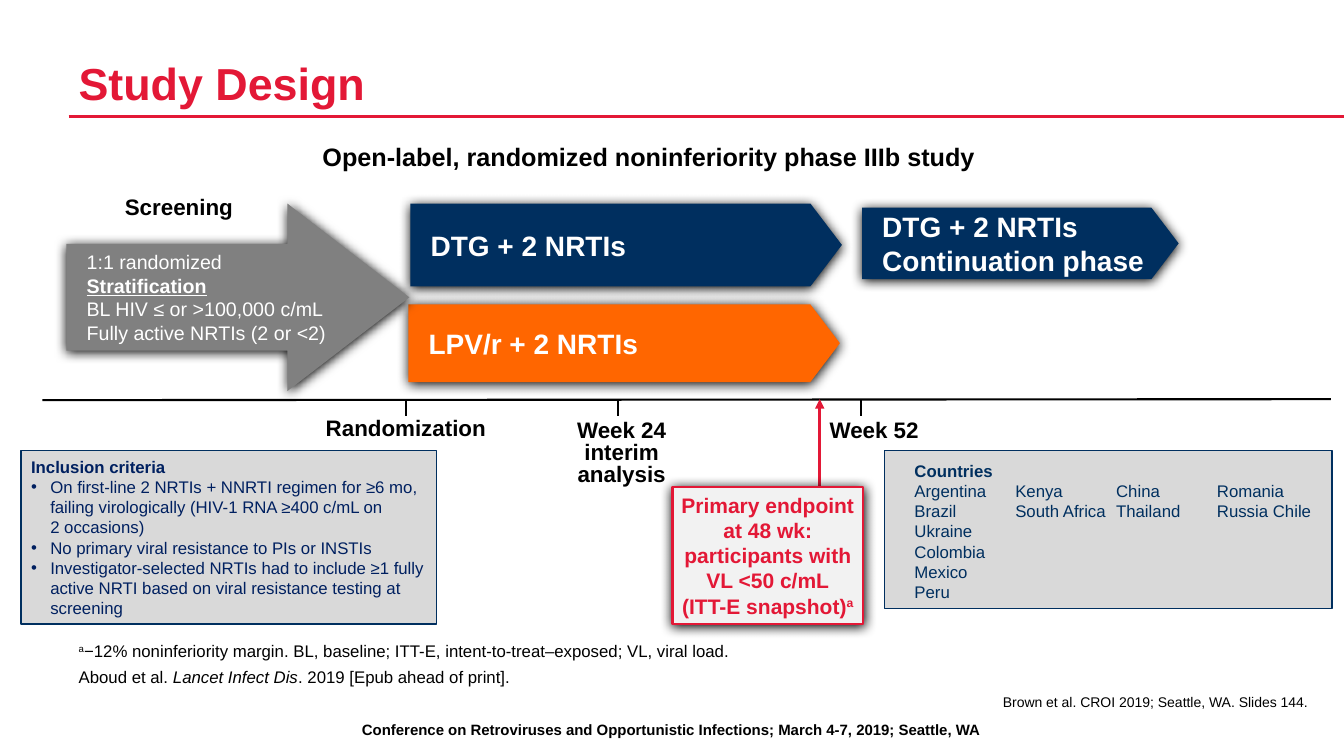
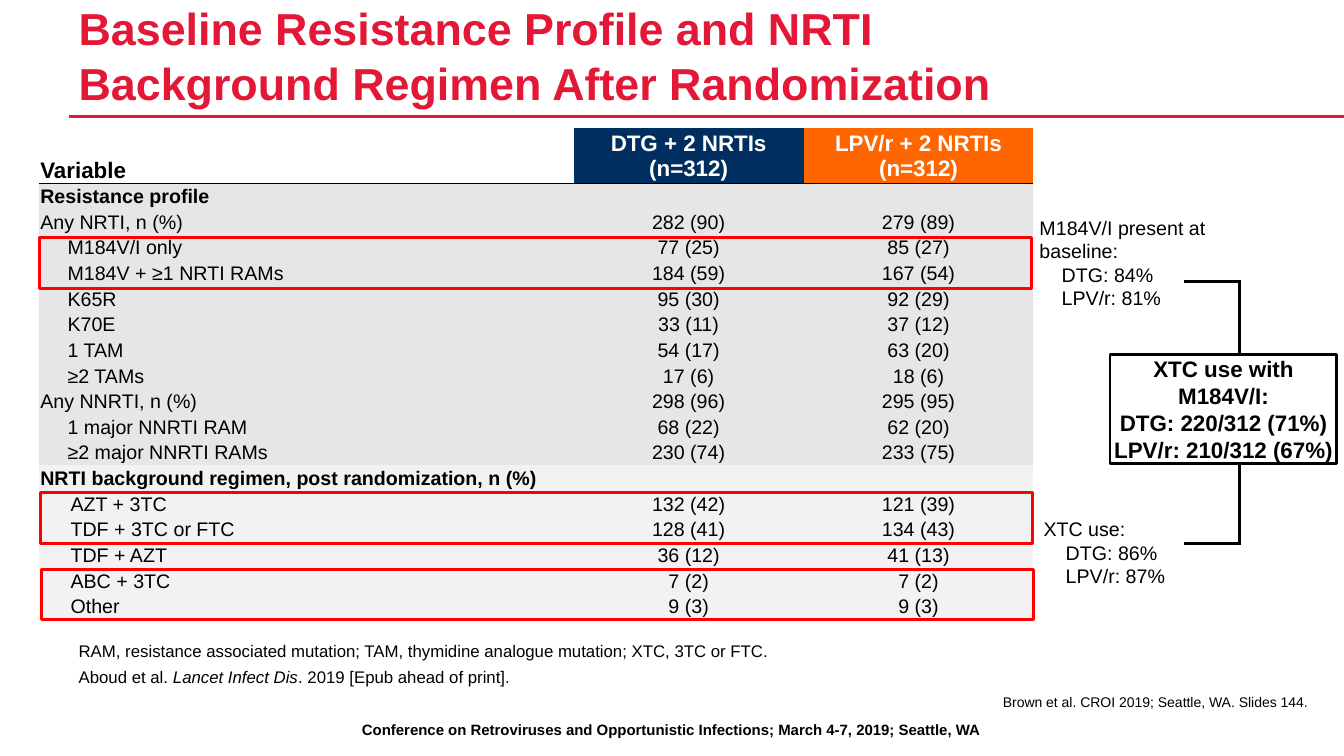
from copy import deepcopy

from lxml.etree import SubElement
from pptx import Presentation
from pptx.dml.color import RGBColor
from pptx.enum.shapes import MSO_CONNECTOR, MSO_SHAPE
from pptx.enum.text import MSO_ANCHOR, PP_ALIGN
from pptx.oxml.ns import qn
from pptx.util import Inches, Pt

FONT = "Arial"
COLORS = {
    "red": "E31836", "highlight": "FF0000", "navy": "002F5F", "ink": "002060",
    "orange": "FF6600", "gray": "808080", "panel": "D9D9D9", "profile": "E6E6E6",
    "regimen": "F2F2F2", "black": "000000", "white": "FFFFFF",
}
ALIGN = {"left": PP_ALIGN.LEFT, "center": PP_ALIGN.CENTER, "right": PP_ALIGN.RIGHT}
ANCHOR = {"top": MSO_ANCHOR.TOP, "middle": MSO_ANCHOR.MIDDLE, "bottom": MSO_ANCHOR.BOTTOM}
NO_GRID_STYLE = "{2D5ABB26-0587-4C30-8999-92F81FD0307C}"
CITATION = ["Aboud et al. ", {"text": "Lancet Infect Dis", "italic": True},
            ". 2019 [Epub ahead of print]."]

PROFILE_ROWS = [
    ("Any NRTI, n (%)", "282 (90)", "279 (89)"),
    ("M184V/I only", "77 (25)", "85 (27)"),
    ("M184V + ≥1 NRTI RAMs", "184 (59)", "167 (54)"),
    ("K65R", "95 (30)", "92 (29)"),
    ("K70E", "33 (11)", "37 (12)"),
    ("1 TAM", "54 (17)", "63 (20)"),
    ("≥2 TAMs", "17 (6)", "18 (6)"),
    ("Any NNRTI, n (%)", "298 (96)", "295 (95)"),
    ("1 major NNRTI RAM", "68 (22)", "62 (20)"),
    ("≥2 major NNRTI RAMs", "230 (74)", "233 (75)"),
]
REGIMEN_ROWS = [
    ("AZT + 3TC", "132 (42)", "121 (39)"),
    ("TDF + 3TC or FTC", "128 (41)", "134 (43)"),
    ("TDF + AZT", "36 (12)", "41 (13)"),
    ("ABC + 3TC", "7 (2)", "7 (2)"),
    ("Other", "9 (3)", "9 (3)"),
]


def rgb(name):
    return RGBColor.from_string(COLORS[name])


def format_run(run, size=12, color="black", bold=False, italic=False, underline=False,
               superscript=False):
    font = run.font
    font.name, font.size, font.bold = FONT, Pt(size), bold
    font.italic, font.underline = italic, underline
    font.color.rgb = rgb(color)
    if superscript:
        run._r.get_or_add_rPr().set("baseline", "30000")


def format_paragraph(paragraph, align="left", spacing=1.0, after=0, indent=0,
                     bullet=None, tabs=()):
    properties = paragraph._p.get_or_add_pPr()
    if indent:
        properties.set("marL", str(Inches(indent)))
    if bullet:
        properties.set("indent", str(-Inches(indent)))
        SubElement(properties, qn("a:buFont"), typeface=FONT)
        SubElement(properties, qn("a:buChar"), char=bullet)
    if tabs:
        tab_list = SubElement(properties, qn("a:tabLst"))
        for position in tabs:
            SubElement(tab_list, qn("a:tab"), pos=str(Inches(position)), algn="l")
    paragraph.alignment = ALIGN[align]
    paragraph.line_spacing = spacing
    paragraph.space_before, paragraph.space_after = Pt(0), Pt(after)


def write_text(frame, paragraphs, align="left", spacing=1.0, after=0, tabs=(), **run_format):
    """A paragraph is a string, a list of runs, or a dict of text and overrides."""
    paragraphs = [paragraphs] if isinstance(paragraphs, str) else paragraphs
    for index, item in enumerate(paragraphs):
        paragraph = frame.paragraphs[0] if index == 0 else frame.add_paragraph()
        options = dict(item) if isinstance(item, dict) else {"text": item}
        text = options.pop("text")
        layout = {"align": align, "spacing": spacing, "after": after, "tabs": tabs}
        for key in ("indent", "bullet"):
            if key in options:
                layout[key] = options.pop(key)
        format_paragraph(paragraph, **layout)
        for part in [text] if isinstance(text, str) else text:
            part = part if isinstance(part, dict) else {"text": part}
            style = {**run_format, **options, **part}
            for number, line in enumerate(style.pop("text").split("\n")):
                if number:
                    paragraph.add_line_break()
                run = paragraph.add_run()
                run.text = line
                format_run(run, **style)
        for line_break in paragraph._p.findall(qn("a:br")):
            line_break.append(deepcopy(paragraph.runs[0]._r.rPr))


def set_frame(frame, anchor="top", margins=(0.1, 0.05, 0.1, 0.05), wrap=True):
    frame.word_wrap = wrap
    frame.vertical_anchor = ANCHOR[anchor]
    (frame.margin_left, frame.margin_top,
     frame.margin_right, frame.margin_bottom) = map(Inches, margins)


def add_text(slide, box, paragraphs, anchor="top", margins=(0, 0, 0, 0), wrap=True, **text_format):
    frame = slide.shapes.add_textbox(*map(Inches, box)).text_frame
    set_frame(frame, anchor, margins, wrap)
    write_text(frame, paragraphs, **text_format)


def add_label(slide, box, paragraphs, size=16, wrap=False, **text_format):
    add_text(slide, box, paragraphs, margins=(0.1, 0.05, 0.1, 0.05), wrap=wrap,
             size=size, bold=True, **text_format)


def add_glow(shape):
    """Dark soft shadow just below the shape."""
    effects = shape._element.spPr.find(qn("a:effectLst"))
    shadow = SubElement(effects, qn("a:outerShdw"), blurRad=str(Pt(8.5)), dist=str(Pt(1)),
                        dir="5400000", algn="t", rotWithShape="0")
    SubElement(shadow, qn("a:srgbClr"), val=COLORS["black"])


def add_block(slide, kind, box, fill=None, line=None, width=1, adjustments=(), glow=False):
    shape = slide.shapes.add_shape(kind, *map(Inches, box))
    shape.shadow.inherit = False
    for index, value in enumerate(adjustments):
        shape.adjustments[index] = value
    if fill:
        shape.fill.solid()
        shape.fill.fore_color.rgb = rgb(fill)
    else:
        shape.fill.background()
    if line:
        shape.line.color.rgb = rgb(line)
        shape.line.width = Pt(width)
    else:
        shape.line.fill.background()
    if glow:
        add_glow(shape)
    return shape


def add_panel(slide, box, paragraphs, fill, line, width=1, glow=False, anchor="middle",
              margins=(0.1, 0.05, 0.1, 0.05), **text_format):
    frame = add_block(slide, MSO_SHAPE.RECTANGLE, box, fill, line, width, glow=glow).text_frame
    set_frame(frame, anchor, margins)
    write_text(frame, paragraphs, **text_format)


def add_arrow_block(slide, kind, box, fill, paragraphs, adjustments, **text_format):
    shape = add_block(slide, kind, box, fill, adjustments=adjustments, glow=True)
    set_frame(shape.text_frame, "middle", (0.2, 0.05, 0, 0.05))
    write_text(shape.text_frame, paragraphs, color="white", **text_format)


def add_line(slide, start, end, color="black", width=1.5, arrow=False):
    connector = slide.shapes.add_connector(MSO_CONNECTOR.STRAIGHT, *map(Inches, start + end))
    connector.line.color.rgb = rgb(color)
    connector.line.width = Pt(width)
    if arrow:
        SubElement(connector.line._get_or_add_ln(), qn("a:tailEnd"), type="triangle")
    SubElement(connector._element.spPr, qn("a:effectLst"))


def add_base_slide(presentation, title, footnote):
    """Slide with the title, rule, footnotes and footer that all slides share."""
    slide = presentation.slides.add_slide(presentation.slide_layouts[6])
    add_label(slide, (0.09, 7.1, 13.14, 0.28),
              "Conference on Retroviruses and Opportunistic Infections; March 4-7, 2019; Seattle, WA",
              size=10.7, wrap=True, align="center")
    add_line(slide, (0.68, 1.16), (13.33, 1.16), "red", 2.25)
    add_text(slide, (0.78, 0.17, 11, 0.92), title, anchor="bottom",
             size=32, bold=True, color="red", spacing=1.04)
    add_text(slide, (0.78, 6.41, 12.19, 0.4), [footnote, CITATION], anchor="bottom", after=4)
    add_text(slide, (0.78, 6.88, 12.19, 0.2), "Brown et al. CROI 2019; Seattle, WA. Slides 144.",
             size=10, align="right")
    return slide


def add_study_arms(slide):
    arms = [
        ((4.07, 2.02, 4.28, 0.82), "navy", "DTG + 2 NRTIs"),
        ((4.05, 3.02, 4.28, 0.77), "orange", "LPV/r + 2 NRTIs"),
        ((8.55, 2.06, 3.14, 0.71), "navy", "DTG + 2 NRTIs\nContinuation phase"),
    ]
    for box, fill, text in arms:
        add_arrow_block(slide, MSO_SHAPE.PENTAGON, box, fill, text, [0.38], size=20, bold=True)
    add_arrow_block(
        slide, MSO_SHAPE.RIGHT_ARROW, (0.66, 2.02, 3.4, 1.86), "gray",
        ["1:1 randomized", {"text": "Stratification", "bold": True, "underline": True},
         "BL HIV ≤ or >100,000 c/mL\nFully active NRTIs (2 or <2)"],
        [0.57, 0.65], size=14)


def add_timeline(slide):
    add_line(slide, (0.42, 3.97), (13.2, 3.96))
    for x in (4.03, 6.13, 8.54):
        add_line(slide, (x, 3.97), (x, 4.13))
    add_label(slide, (1.14, 1.87, 1.29, 0.37), "Screening")
    add_label(slide, (3.12, 4.06, 1.81, 0.37), "Randomization", align="center")
    add_label(slide, (5.59, 4.12, 1.15, 0.77), "Week 24\ninterim\nanalysis",
              align="center", spacing=Pt(16))
    add_label(slide, (8.13, 4.08, 1.1, 0.37), "Week 52")
    add_line(slide, (8.13, 4.82), (8.13, 3.96), "red", 2.25, arrow=True)


def add_design_slide(presentation):
    slide = add_base_slide(
        presentation, "Study Design",
        [{"text": "a", "superscript": True},
         "−12% noninferiority margin. BL, baseline; ITT-E, intent-to-treat–exposed; VL, viral load."])
    add_label(slide, (0.32, 1.35, 12.23, 0.4),
              "Open-label, randomized noninferiority phase IIIb study",
              size=18, wrap=True, align="center")
    add_study_arms(slide)
    add_timeline(slide)
    criteria = [
        "On first-line 2 NRTIs + NNRTI regimen for ≥6 mo, failing virologically "
        "(HIV-1 RNA ≥400 c/mL on\n2 occasions)",
        "No primary viral resistance to PIs or INSTIs",
        "Investigator-selected NRTIs had to include ≥1 fully active NRTI based on "
        "viral resistance testing at screening",
    ]
    add_panel(slide, (0.21, 4.47, 4.12, 1.72),
              [{"text": "Inclusion criteria", "bold": True}]
              + [{"text": text, "indent": 0.19, "bullet": "•"} for text in criteria],
              "panel", "navy", color="ink")
    add_panel(slide, (6.67, 4.83, 1.89, 1.36),
              ["Primary endpoint\nat 48 wk:\nparticipants with\nVL <50 c/mL",
               ["(ITT-E snapshot)", {"text": "a", "superscript": True}]],
              "regimen", "red", 1.5, glow=True, margins=(0, 0.05, 0, 0.05),
              size=15, bold=True, color="red", align="center")
    add_panel(slide, (8.77, 4.47, 4.44, 1.57),
              [{"text": "Countries", "bold": True}, "Argentina\tKenya\tChina\tRomania",
               "Brazil\tSouth Africa\tThailand\tRussia Chile",
               "Ukraine", "Colombia", "Mexico", "Peru"],
              "panel", "navy", anchor="top", margins=(0.3, 0.1, 0.1, 0.05),
              color="navy", tabs=(1, 2, 3))


def fill_cell(cell, paragraphs, fill=None, anchor="middle", underlined=False, **text_format):
    cell.margin_left = cell.margin_right = cell.margin_top = Inches(0.01)
    cell.margin_bottom = 0
    cell.vertical_anchor = ANCHOR[anchor]
    if underlined:
        border = SubElement(cell._tc.get_or_add_tcPr(), qn("a:lnB"), w=str(Pt(1)))
        color = SubElement(border, qn("a:solidFill"))
        SubElement(color, qn("a:srgbClr"), val=COLORS["black"])
    if fill:
        cell.fill.solid()
        cell.fill.fore_color.rgb = rgb(fill)
    else:
        cell.fill.background()
    if paragraphs:
        write_text(cell.text_frame, paragraphs, **text_format)
    else:
        cell.text_frame.paragraphs[0]._p.get_or_add_endParaRPr().set("sz", "1400")


def add_baseline_table(slide):
    body = [("Resistance profile", "", "", "profile", 0)]
    body += [row + ("profile", 0 if row[0].startswith("Any") else 0.27) for row in PROFILE_ROWS]
    body += [("NRTI background regimen, post randomization, n (%)", "", "", "regimen", 0)]
    body += [row + ("regimen", 0.3) for row in REGIMEN_ROWS]
    header_height, body_height = 0.55, 4.33
    table_shape = slide.shapes.add_table(len(body) + 1, 3, *map(
        Inches, (0.39, 1.27, 9.86, header_height + body_height)))
    table = table_shape.table
    table.first_row = table.horz_banding = False
    table._tbl.tblPr.find(qn("a:tableStyleId")).text = NO_GRID_STYLE
    for column, width in zip(table.columns, (5.3, 2.28, 2.28)):
        column.width = Inches(width)
    table.rows[0].height = Inches(header_height)
    fill_cell(table.cell(0, 0), "Variable", anchor="bottom", underlined=True, size=16, bold=True)
    for column, (arm, fill) in enumerate([("DTG", "navy"), ("LPV/r", "orange")], 1):
        fill_cell(table.cell(0, column), [f"{arm} + 2 NRTIs", "(n=312)"], fill, underlined=True,
                  size=16, bold=True, color="white", align="center")
    for row, (variable, dtg, lpv, fill, indent) in enumerate(body, 1):
        table.rows[row].height = Inches(body_height / len(body))
        fill_cell(table.cell(row, 0), [{"text": variable, "indent": indent}], fill,
                  size=14, bold=not dtg)
        for column, value in enumerate((dtg, lpv), 1):
            fill_cell(table.cell(row, column), value, fill, size=14, align="center")


def add_resistance_slide(presentation):
    slide = add_base_slide(
        presentation, "Baseline Resistance Profile and NRTI\nBackground Regimen After Randomization",
        "RAM, resistance associated mutation; TAM, thymidine analogue mutation; XTC, 3TC or FTC.")
    add_baseline_table(slide)
    for left, top in ((0.39, 2.36), (0.4, 4.89), (0.41, 5.65)):
        add_block(slide, MSO_SHAPE.RECTANGLE, (left, top, 9.84, 0.5), line="highlight", width=2)
    notes = [((10.31, 2.14, 1.75, 0.94), "M184V/I present at baseline:", "84%", "81%"),
             ((10.35, 5.13, 1.35, 0.71), "XTC use:", "86%", "87%")]
    for box, heading, dtg, lpv in notes:
        rates = [{"text": text, "indent": 0.22} for text in (f"DTG: {dtg}", f"LPV/r: {lpv}")]
        add_text(slide, box, [heading] + rates, size=14)
    add_line(slide, (12.29, 2.79), (12.29, 5.39), width=2.25)
    for y in (2.79, 5.39):
        add_line(slide, (11.74, y), (12.31, y), width=2)
    add_panel(slide, (11.01, 3.52, 2.25, 1.08),
              ["XTC use with M184V/I:", "DTG: 220/312 (71%)", "LPV/r: 210/312 (67%)"],
              "white", "black", 2, margins=(0, 0, 0, 0),
              size=16, bold=True, align="center")


def main():
    presentation = Presentation()
    presentation.slide_width, presentation.slide_height = Inches(13.33), Inches(7.5)
    add_design_slide(presentation)
    add_resistance_slide(presentation)
    presentation.save("out.pptx")


if __name__ == "__main__":
    main()
